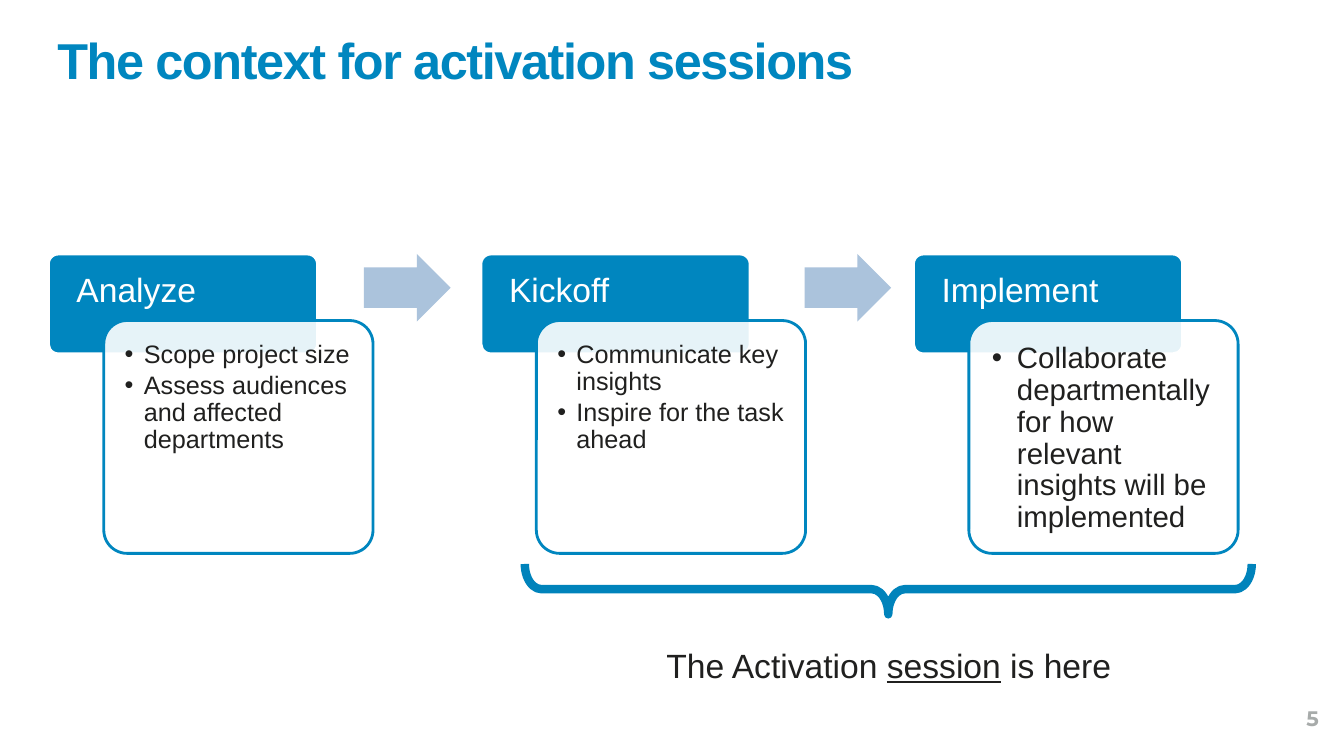
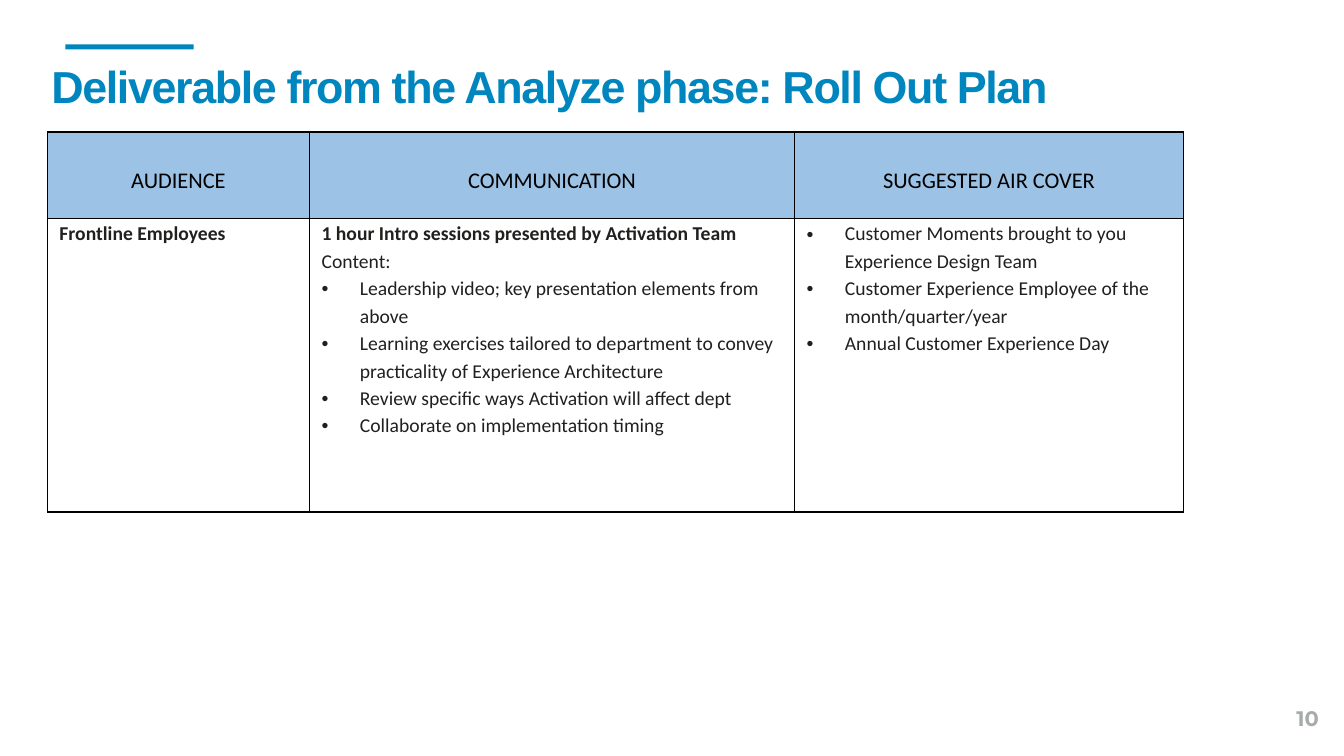
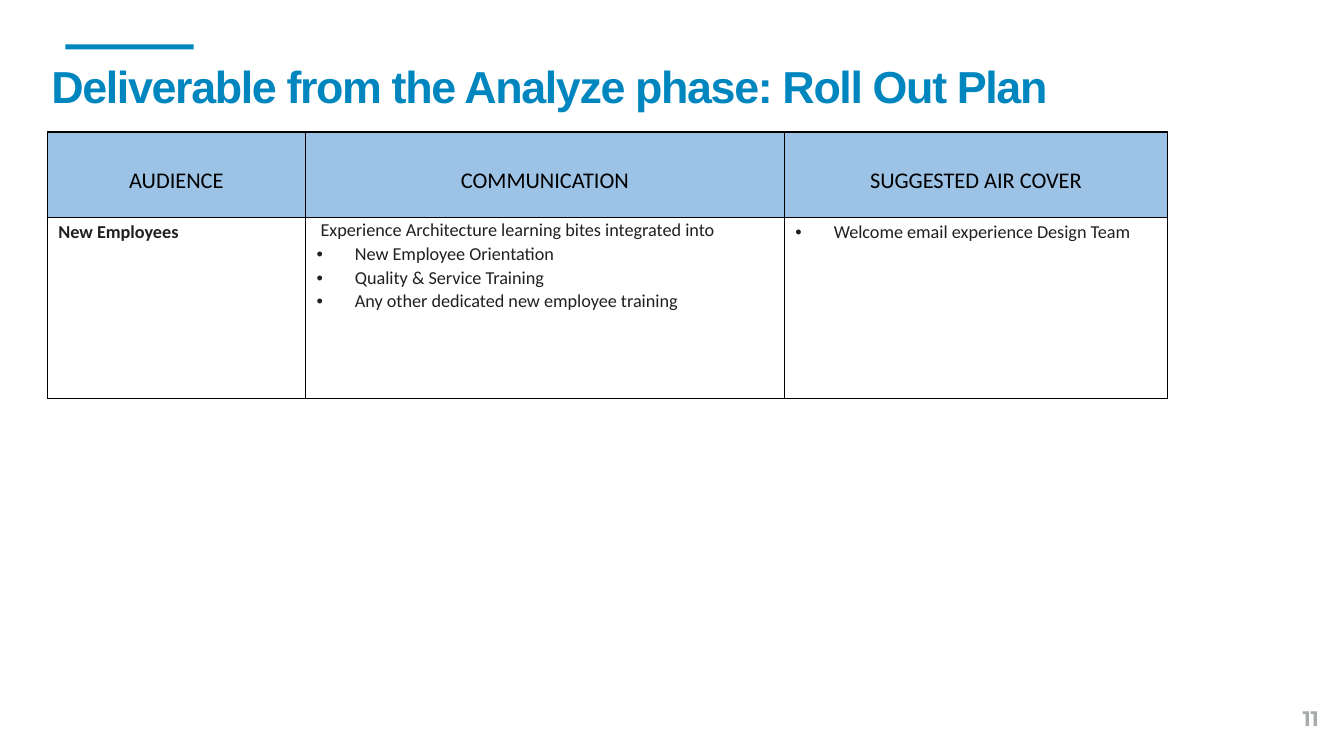
from lxml import etree
from pptx import Presentation
from pptx.dml.color import RGBColor
from pptx.enum import shapes, text
from pptx.oxml import ns
from pptx.util import Inches, Pt

COLORS = {"blue": "0086BF", "brace": "0083BB", "arrow": "ABC3DC", "header": "9CC2E5",
          "ink": "20201F", "black": "000000", "white": "FFFFFF", "gray": "A7ABAA"}
BODY = {"name": "Arial", "size": 18, "color": "ink"}
TITLE = {"name": "Arial", "size": 36, "color": "blue", "bold": True, "spacing": -1}
PAGE_NUMBER = {"name": "Montserrat", "size": 15, "color": "gray", "bold": True,
               "align": text.PP_ALIGN.RIGHT}
CELL = {"name": "Calibri", "color": "ink", "line": 1.15}
HEADER = CELL | {"size": 16, "color": "black", "align": text.PP_ALIGN.CENTER}
SHAPE = shapes.MSO_SHAPE


def rgb(color):
    """Return the named palette colour."""
    return RGBColor.from_string(COLORS[color])


def assign(target, values):
    """Set every attribute in values on the target."""
    for attribute, value in values.items():
        setattr(target, attribute, value)


def margins(left, top, right, bottom):
    """Return margin attributes for a text frame or a cell."""
    sides = {"left": left, "top": top, "right": right, "bottom": bottom}
    return {f"margin_{side}": Inches(size) for side, size in sides.items()}


def write_run(paragraph, words, style):
    """Add one run in the given style."""
    run = paragraph.add_run()
    run.text = words
    assign(run.font, {"name": style["name"], "size": Pt(style["size"]),
                      "bold": style.get("bold", False),
                      "underline": style.get("underline", False)})
    run.font.color.rgb = rgb(style["color"])
    if "spacing" in style:
        run.font._element.set("spc", str(style["spacing"] * 100))


def write(frame, paragraphs, style):
    """Fill a frame; each paragraph is a list of (words, style changes)."""
    for index, runs in enumerate(paragraphs):
        paragraph = frame.add_paragraph() if index else frame.paragraphs[0]
        look = style | runs[0][1]
        properties = paragraph._p.get_or_add_pPr()
        hanging = look.get("bullet", 0)
        properties.set("marL", str(Inches(look.get("indent", hanging))))
        properties.set("indent", str(-Inches(hanging)))
        if hanging:
            etree.SubElement(properties, ns.qn("a:buFont")).set("typeface", "Arial")
            etree.SubElement(properties, ns.qn("a:buChar")).set("char", "•")
        assign(paragraph, {"alignment": look.get("align", text.PP_ALIGN.LEFT),
                           "line_spacing": look.get("line", 1.0),
                           "space_after": Pt(look.get("after", 0))})
        for words, changes in runs:
            write_run(paragraph, words, style | changes)


def add_text(slide, box, runs, style, inset=(0.1, 0.05, 0.1, 0.05),
             anchor=text.MSO_ANCHOR.TOP):
    """Add a wrapping text box holding one paragraph."""
    frame = slide.shapes.add_textbox(*map(Inches, box)).text_frame
    assign(frame, {"word_wrap": True, "vertical_anchor": anchor} | margins(*inset))
    write(frame, [runs], style)


def add_figure(slide, kind, box, fill=None, line=None, width=2, adjust=()):
    """Add a flat preset shape."""
    figure = slide.shapes.add_shape(kind, *map(Inches, box))
    figure.shadow.inherit = False
    for index, value in enumerate(adjust):
        figure.adjustments[index] = value
    if fill:
        figure.fill.solid()
        figure.fill.fore_color.rgb = rgb(fill)
    else:
        figure.fill.background()
    if line:
        figure.line.color.rgb = rgb(line)
        figure.line.width = Pt(width)
    else:
        figure.line.fill.background()
    return figure


def add_panel(slide, box, fill, line, inset, paragraphs, style):
    """Add a rounded panel with text at its top left."""
    panel = add_figure(slide, SHAPE.ROUNDED_RECTANGLE, box, fill, line, adjust=[0.1])
    assign(panel.text_frame, {"word_wrap": True, "vertical_anchor": text.MSO_ANCHOR.TOP}
           | margins(*inset))
    write(panel.text_frame, paragraphs, style)
    return panel


def add_phase(slide, left, top, name, points, size, bullet, inset):
    """Draw a phase heading with its overlapping card of points."""
    add_panel(slide, (left, top, 2.67, 0.99), "blue", "white", (0.25, 0.16, 0.16, 0.1),
              [[(name, {})]], BODY | {"size": 24, "color": "white", "line": 0.9})
    look = BODY | {"size": size, "bullet": bullet, "line": 0.9, "after": size * 0.15}
    card = add_panel(slide, (left + 0.55, top + 0.66, 2.67, 2.31), "white", "blue",
                     [inset] * 4, [[(point, {})] for point in points], look)
    tint = card.fill._xPr.find(".//" + ns.qn("a:srgbClr"))
    etree.SubElement(tint, ns.qn("a:alpha")).set("val", "90000")


def add_page(deck, number):
    """Add a blank slide with its page number."""
    slide = deck.slides.add_slide(deck.slide_layouts[6])
    add_text(slide, (12.34, 6.92, 0.84, 0.4), [(number, {})], PAGE_NUMBER,
             anchor=text.MSO_ANCHOR.MIDDLE)
    return slide


def context_slide(deck):
    """Build the three-phase process slide."""
    slide = add_page(deck, "5")
    add_text(slide, (0.47, 0.24, 11.82, 0.63),
             [("The context for activation sessions", {})], TITLE)
    phases = [
        ("Analyze", ["Scope project size",
                     "Assess audiences and affected departments"], 18, 0.19, 0.14),
        ("Kickoff", ["Communicate key insights",
                     "Inspire for the task ahead"], 18, 0.19, 0.14),
        ("Implement", ["Collaborate departmentally for how relevant insights "
                       "will be implemented"], 21, 0.25, 0.16),
    ]
    top = 2.52
    for index, phase in enumerate(phases):
        add_phase(slide, 0.48 + index * 4.29, top, *phase)
    for left in (3.61, 7.98):
        add_figure(slide, SHAPE.RIGHT_ARROW, (left, top, 0.86, 0.67), "arrow",
                   adjust=[0.6, 0.5])
    brace = add_figure(slide, SHAPE.LEFT_BRACE, (8.56, 2.24, 0.5, 7.21), line="brace",
                       width=6, adjust=[0.33, 0.5])
    brace.rotation = 270
    add_text(slide, (5.21, 6.35, 7.21, 0.5),
             [("The Activation ", {}), ("session", {"underline": True}), (" is here", {})],
             BODY | {"size": 24, "align": text.PP_ALIGN.CENTER})


def outline_cell(cell):
    """Give a cell thin black borders on all sides."""
    properties = cell._tc.get_or_add_tcPr()
    for index, side in enumerate(("lnL", "lnR", "lnT", "lnB")):
        border = etree.Element(ns.qn(f"a:{side}"), w=str(Pt(1)))
        solid = etree.SubElement(border, ns.qn("a:solidFill"))
        etree.SubElement(solid, ns.qn("a:srgbClr")).set("val", COLORS["black"])
        properties.insert(index, border)


def add_plan(slide, left, top, widths, heights, side, size, body):
    """Draw the roll out table under its heading row."""
    box = map(Inches, (left, top, sum(widths), sum(heights)))
    plan = slide.shapes.add_table(2, 3, *box).table
    assign(plan, {"first_row": False, "horz_banding": False})
    for column, width in zip(plan.columns, widths):
        column.width = Inches(width)
    for row, height in zip(plan.rows, heights):
        row.height = Inches(height)
    headings = [[[(name, {})]] for name in
                ("AUDIENCE", "COMMUNICATION", "SUGGESTED AIR COVER")]
    rows = [(headings, HEADER, "header", 0.31), (body, CELL | {"size": size}, "white", 0)]
    for row, (contents, style, fill, head_room) in enumerate(rows):
        for column, paragraphs in enumerate(contents):
            cell = plan.cell(row, column)
            assign(cell, margins(side, head_room, side, 0))
            cell.fill.solid()
            cell.fill.fore_color.rgb = rgb(fill)
            outline_cell(cell)
            write(cell.text_frame, paragraphs, style)


def plan_slide(deck, number, **plan):
    """Build a roll out plan slide."""
    slide = add_page(deck, number)
    add_figure(slide, SHAPE.RECTANGLE, (0.65, 0.44, 1.27, 0.05), "blue")
    add_text(slide, (0.51, 0.53, 11.16, 0.64),
             [("Deliverable from the Analyze phase: Roll Out Plan", {})],
             TITLE | {"size": 32}, (0, 0.05, 0.1, 0.05))
    add_plan(slide, 0.47, 1.31, **plan)


def bullets(*points, **changes):
    """Return bulleted cell paragraphs."""
    return [[(point, {"bullet": 0.38} | changes)] for point in points]


def main():
    """Build and save the presentation."""
    deck = Presentation()
    assign(deck, {"slide_width": Inches(13.33), "slide_height": Inches(7.5)})
    bold = {"bold": True}
    context_slide(deck)
    plan_slide(
        deck, "10", widths=(2.6, 4.81, 3.86), heights=(0.86, 2.91), side=0.12, size=14,
        body=[
            [[("Frontline Employees", bold)]],
            [[("1 hour Intro sessions presented by Activation Team", bold)],
             [("Content:", {})],
             *bullets("Leadership video; key presentation elements from above",
                      "Learning exercises tailored to department to convey "
                      "practicality of Experience Architecture",
                      "Review specific ways Activation will affect dept",
                      "Collaborate on implementation timing")],
            bullets("Customer Moments brought to you Experience Design Team",
                    "Customer Experience Employee of the month/quarter/year",
                    "Annual Customer Experience Day"),
        ])
    plan_slide(
        deck, "11", widths=(2.56, 4.75, 3.8), heights=(0.85, 1.79), side=0.11, size=13,
        body=[
            [[("New Employees", bold)]],
            [[("Experience Architecture learning bites integrated into",
               {"line": 1.07, "indent": 0.04})],
             *bullets("New Employee Orientation", "Quality & Service Training",
                      "Any other dedicated new employee training", line=1.07)],
            bullets("Welcome email experience Design Team"),
        ])
    deck.save("out.pptx")


if __name__ == "__main__":
    main()
